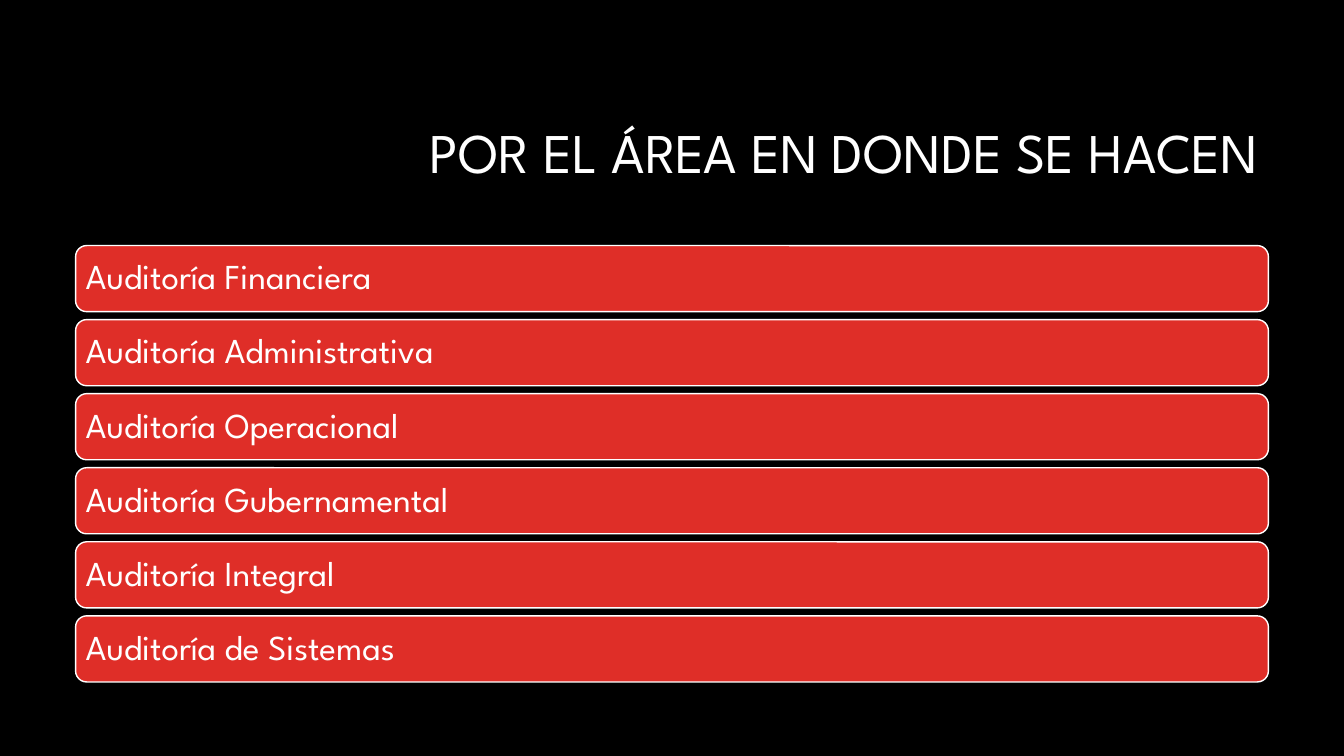
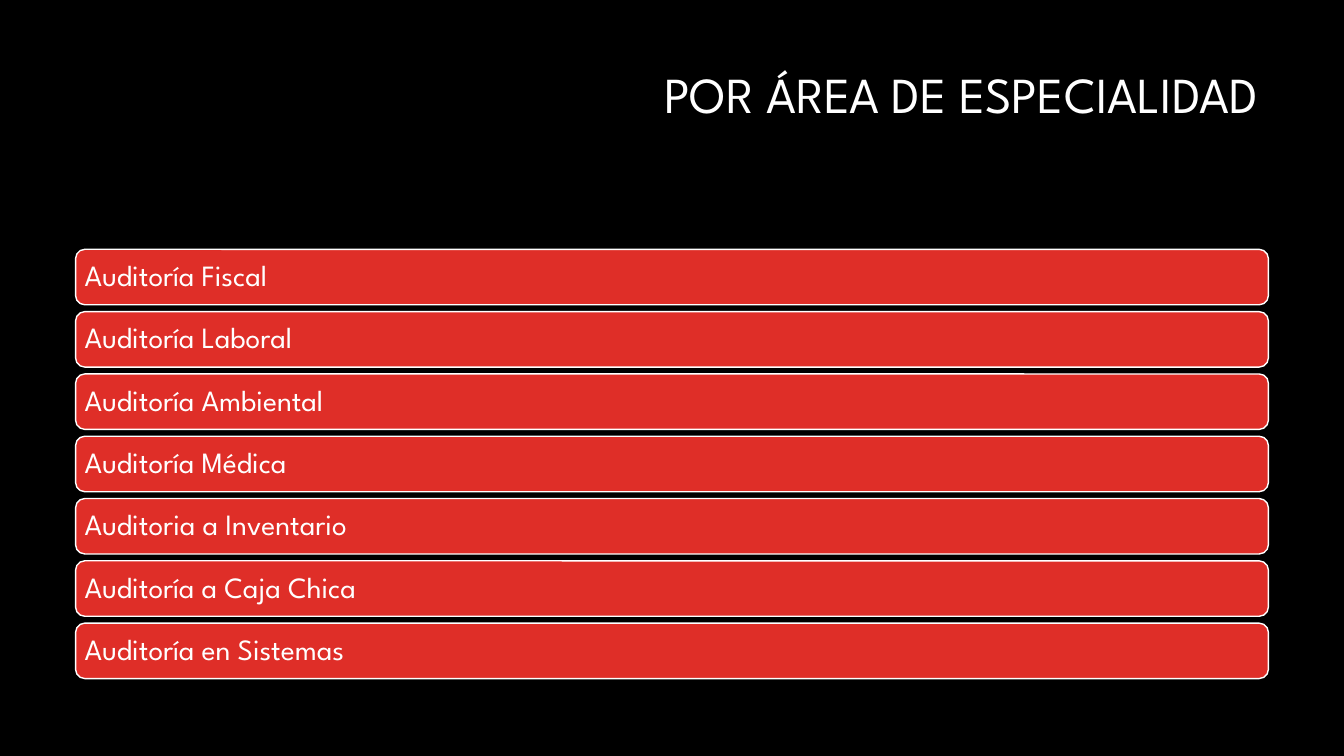
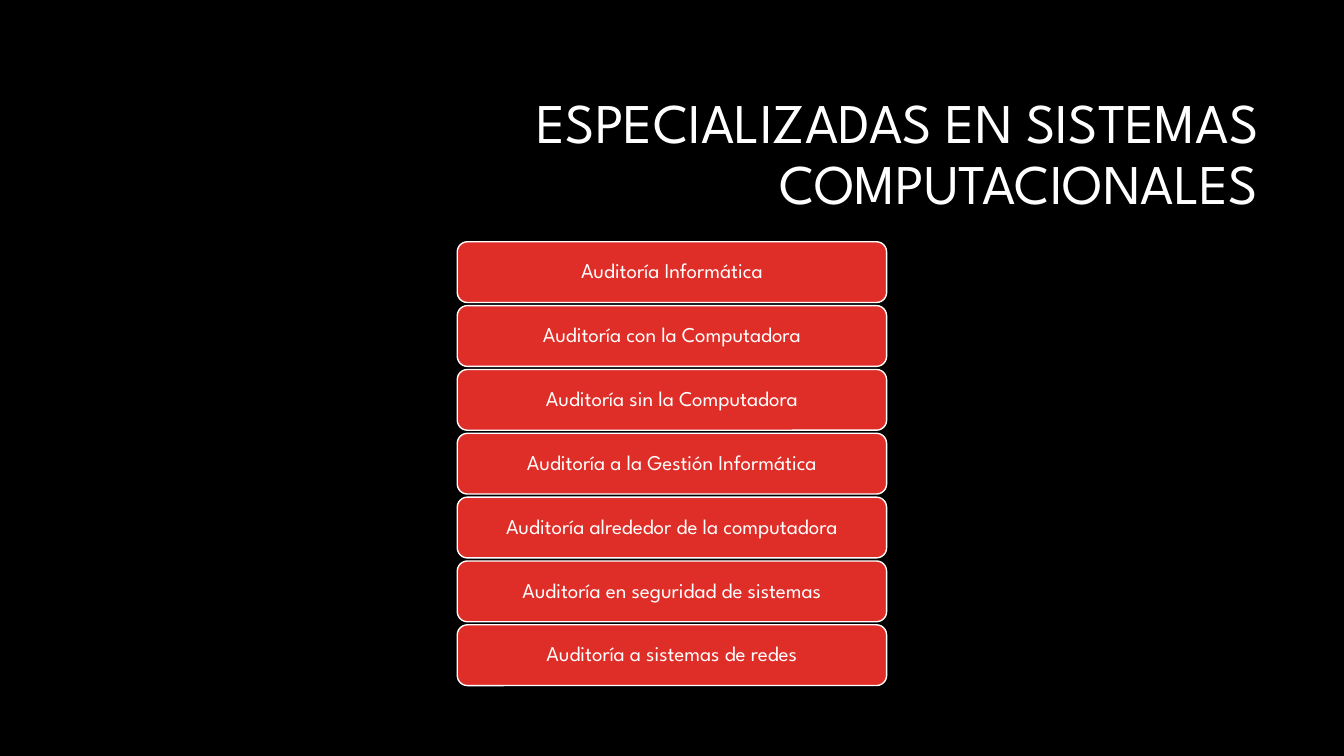
from pptx import Presentation
from pptx.dml.color import RGBColor
from pptx.enum import shapes, text
from pptx.util import Pt

FONT = "League Spartan"
COLORS = {"background": "000000", "bar": "DF2E28", "text": "FFFFFF"}
SLIDE_W, SLIDE_H = 960, 540
TITLE_LEFT, TITLE_W, TITLE_BOTTOM = 228, 678, 162


def color(name):
    return RGBColor.from_string(COLORS[name])


class Deck:
    def __init__(self):
        self.prs = Presentation()
        self.prs.slide_width = Pt(SLIDE_W)
        self.prs.slide_height = Pt(SLIDE_H)
        fill = self.prs.slide_master.background.fill
        fill.solid()
        fill.fore_color.rgb = color("background")
        self.s = None

    def add_slide(self):
        self.s = self.prs.slides.add_slide(self.prs.slide_layouts[5])

    def format_text(self, tf, content, size, align):
        tf.word_wrap = True
        p = tf.paragraphs[0]
        p.text = content
        p.alignment = align
        p.line_spacing = 0.9
        p.font.name = FONT
        p.font.size = Pt(size)
        p.font.color.rgb = color("text")

    def title(self, content, size=40, top=60.5, margin=3.6,
              anchor=text.MSO_ANCHOR.MIDDLE):
        sp = self.s.shapes.title
        sp.left, sp.top = Pt(TITLE_LEFT), Pt(top)
        sp.width, sp.height = Pt(TITLE_W), Pt(TITLE_BOTTOM - top)
        tf = sp.text_frame
        tf.auto_size = text.MSO_AUTO_SIZE.NONE
        tf.vertical_anchor = anchor
        tf.margin_top = tf.margin_bottom = Pt(margin)
        self.format_text(tf, content, size, text.PP_ALIGN.RIGHT)

    def bar(self, content, top, width, height, size, margin, align):
        sp = self.s.shapes.add_shape(
            shapes.MSO_SHAPE.ROUNDED_RECTANGLE,
            Pt((SLIDE_W - width) / 2), Pt(top), Pt(width), Pt(height))
        sp.shadow.inherit = False
        sp.fill.solid()
        sp.fill.fore_color.rgb = color("bar")
        sp.line.color.rgb = color("text")
        sp.line.width = Pt(1)
        tf = sp.text_frame
        tf.vertical_anchor = text.MSO_ANCHOR.MIDDLE
        tf.margin_left = tf.margin_right = Pt(margin)
        tf.margin_top = tf.margin_bottom = 0
        self.format_text(tf, content, size, align)

    def bar_list(self, items, top, pitch, height, size, width=852, margin=4.8,
                 align=text.PP_ALIGN.LEFT):
        """Stack centred bars, their tops one pitch apart."""
        for i, item in enumerate(items):
            self.bar(item, top + i * pitch, width, height, size, margin, align)


def main():
    deck = Deck()

    deck.add_slide()
    deck.title("POR EL ÁREA EN DONDE SE HACEN")
    deck.bar_list(
        ["Auditoría Financiera", "Auditoría Administrativa",
         "Auditoría Operacional", "Auditoría Gubernamental",
         "Auditoría Integral", "Auditoría de Sistemas"],
        top=175.4, pitch=52.9, height=47.2, size=25)

    deck.add_slide()
    deck.title("POR ÁREA DE ESPECIALIDAD", size=36, top=50, margin=0,
               anchor=text.MSO_ANCHOR.TOP)
    deck.bar_list(
        ["Auditoría Fiscal", "Auditoría Laboral", "Auditoría Ambiental",
         "Auditoría Médica", "Auditoria a Inventario",
         "Auditoría a Caja Chica", "Auditoría en Sistemas"],
        top=178.1, pitch=44.5, height=39.6, size=21, margin=4.5)

    deck.add_slide()
    deck.title("ESPECIALIZADAS EN SISTEMAS COMPUTACIONALES")
    deck.bar_list(
        ["Auditoría Informática", "Auditoría con la Computadora",
         "Auditoría sin la Computadora", "Auditoría a la Gestión Informática",
         "Auditoría alrededor de la computadora",
         "Auditoría en seguridad de sistemas", "Auditoría a sistemas de redes"],
        top=172.7, pitch=45.6, height=43.4, size=15, width=306.7,
        align=text.PP_ALIGN.CENTER)

    deck.prs.save("out.pptx")


if __name__ == "__main__":
    main()
